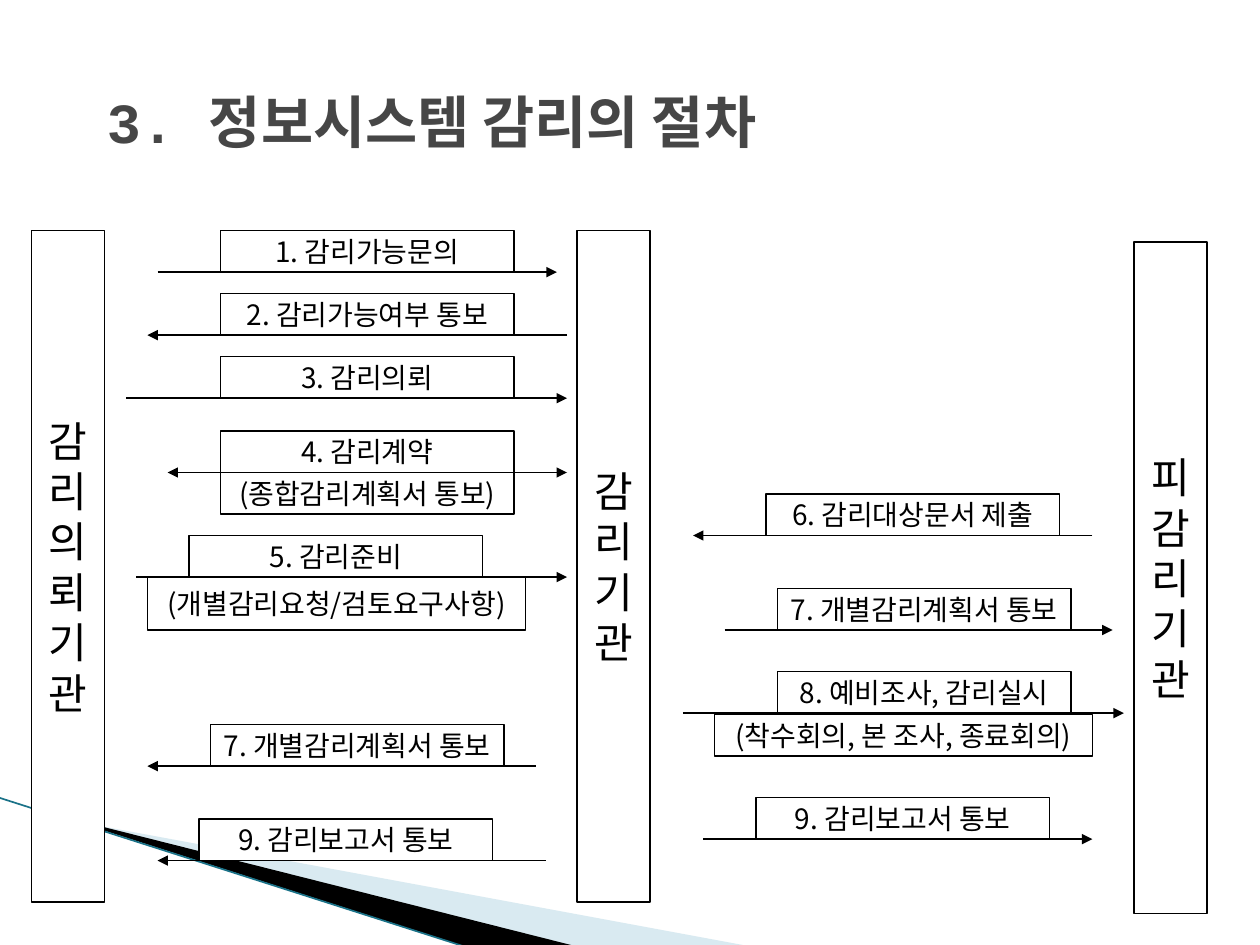
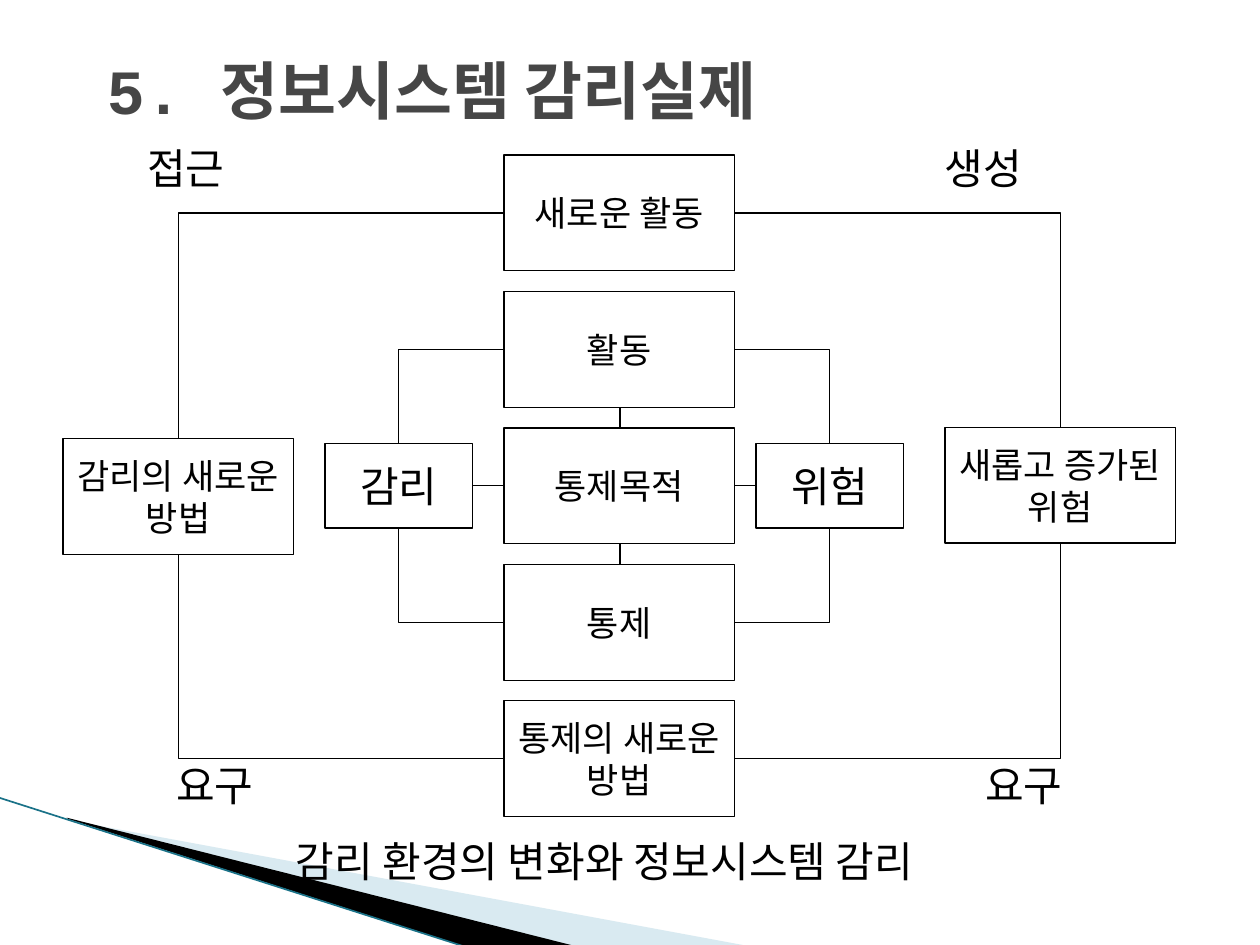
"""Build two slides on the steps and practice of information system audits."""
import lxml.etree
import pptx
import pptx.dml.color
import pptx.enum.shapes
import pptx.enum.text
import pptx.oxml.ns
import pptx.util

Inches = pptx.util.Inches
qn = pptx.oxml.ns.qn
HUES = {"ink": "000000", "paper": "FFFFFF", "title": "464646", "pale": "A0CBDC", "edge": "1A7288"}
RGB = {name: pptx.dml.color.RGBColor.from_string(hue) for name, hue in HUES.items()}
SANS = "Noto Sans CJK KR"
KINDS = pptx.enum.shapes.MSO_CONNECTOR
MID = pptx.enum.text.MSO_ANCHOR.MIDDLE
TOP = pptx.enum.text.MSO_ANCHOR.TOP
ALIGN = pptx.enum.text.PP_ALIGN


def put(slide, text, at, size, boxed=True, title=False):
    spot = [Inches(v) for v in at]
    if boxed:
        shape = slide.shapes.add_shape(pptx.enum.shapes.MSO_SHAPE.RECTANGLE, *spot)
        shape.shadow.inherit = False
        shape.fill.solid()
        shape.fill.fore_color.rgb = RGB["paper"]
        shape.line.color.rgb = RGB["ink"]
        shape.line.width = pptx.util.Pt(0.75)
    else:
        shape = slide.shapes.add_textbox(*spot)
    frame = shape.text_frame
    frame.text = text
    frame.word_wrap = title
    frame.vertical_anchor = MID if boxed or title else TOP
    look = {"name": "Courier New" if title else SANS, "size": pptx.util.Pt(size), "bold": title}
    for para in frame.paragraphs:
        para.alignment = ALIGN.CENTER if boxed else ALIGN.LEFT
        if not title:
            para.line_spacing = pptx.util.Pt(size * 1.2)
        for run in para.runs:
            for key, value in look.items():
                setattr(run.font, key, value)
            run.font.color.rgb = RGB["title" if title else "ink"]
            lxml.etree.SubElement(run.font._element, qn("a:ea"), typeface=SANS)


def link(slide, start, end, ends=(), bent=False, hue="ink", width=0.75):
    kind = KINDS.ELBOW if bent else KINDS.STRAIGHT
    line = slide.shapes.add_connector(kind, *[Inches(v) for v in (*start, *end)])
    line.line.color.rgb = RGB[hue]
    line.line.width = pptx.util.Pt(width)
    props = line._element.spPr
    if bent:
        props.find(qn("a:prstGeom")).set("prst", "bentConnector2")
    for end_tag in ends:
        lxml.etree.SubElement(props.find(qn("a:ln")), qn(end_tag), type="triangle")
    lxml.etree.SubElement(props, qn("a:effectLst"))


deck = pptx.Presentation()
deck.slide_width, deck.slide_height = Inches(10), Inches(7.5)

WEDGES = [
    ("pale", 40, [(0.55, 6.51), (5.95, 7.51), (4.56, 7.51), (0.55, 6.5)]),
    ("ink", 100, [(0.53, 6.49), (4.57, 7.51), (3.72, 7.52), (0.54, 6.5)]),
]
TITLES = [
    ("3. 정보시스템 감리의 절차", 0.67, 0.58, 32.4),
    ("5. 정보시스템 감리실제", 0.33, 0.75, 36),
]
pages = []
for text, top, high, size in TITLES:
    page = deck.slides.add_slide(deck.slide_layouts[6])
    for hue, alpha, points in WEDGES:
        spots = [(Inches(x), Inches(y)) for x, y in points]
        pen = page.shapes.build_freeform(*spots[0])
        pen.add_line_segments(spots[1:], close=True)
        wedge = pen.convert_to_shape()
        wedge.shadow.inherit = False
        wedge.fill.solid()
        wedge.fill.fore_color.rgb = RGB[hue]
        wedge.line.fill.background()
        if alpha < 100:
            tint = wedge._element.spPr.find(qn("a:solidFill"))[0]
            lxml.etree.SubElement(tint, qn("a:alpha"), val=str(alpha * 1000))
    link(page, (-0.01, 6.33), (3.71, 7.52), hue="edge", width=0.95)
    put(page, text, (0.75, top, 8.5, high), size, boxed=False, title=True)
    pages.append(page)
steps, cycle = pages

for name, left, top in [("감리의뢰기관", 0.25, 1.83), ("감리기관", 4.58, 1.83), ("피감리기관", 9, 1.92)]:
    put(steps, "\n".join(name), (left, top, 0.58, 5.33), 24)

NOTES = [
    ("(종합감리계획서 통보)", 1.75, 3.75, 2.33, 0.33),
    ("(개별감리요청/검토요구사항)", 1.17, 4.58, 3, 0.42),
    ("(착수회의, 본 조사, 종료회의)", 5.67, 5.67, 3, 0.33),
]
for text, *spot in NOTES:
    put(steps, text, spot, 16)

STEPS = [
    ("1. 감리가능문의", 1.75, 1.83, 1.25, 4.42),
    ("2. 감리가능여부 통보", 1.75, 2.33, 4.5, 1.17),
    ("3. 감리의뢰", 1.75, 2.83, 1, 4.5),
    ("4. 감리계약", 1.75, 3.42, 1.33, 4.5),
    ("5. 감리준비", 1.5, 4.25, 1.08, 4.5),
    ("6. 감리대상문서 제출", 6.08, 3.92, 8.67, 5.5),
    ("7. 개별감리계획서 통보", 1.67, 5.75, 4.25, 1.17),
    ("7. 개별감리계획서 통보", 6.17, 4.67, 5.75, 8.83),
    ("8. 예비조사, 감리실시", 6.17, 5.33, 5.42, 8.92),
    ("9. 감리보고서 통보", 1.58, 6.5, 4.33, 1.25),
    ("9. 감리보고서 통보", 6, 6.33, 5.58, 8.67),
]
for text, left, top, start, end in STEPS:
    put(steps, text, (left, top, 2.33, 0.33), 16)
    ends = ("a:headEnd", "a:tailEnd") if text.startswith("4") else ("a:tailEnd",)
    link(steps, (start, top + 0.33), (end, top + 0.33), ends)

WIDE, HIGH, PITCH = 1.83, 0.92, 1.083
LEFT, RIGHT, AXIS = 4, 5.83, 4.92
STACK = ["새로운 활동", "활동", "통제목적", "통제", "통제의 새로운\n방법"]
tops = [1.23 + PITCH * row for row in range(len(STACK))]
mids = [top + HIGH / 2 for top in tops]
for text, top in zip(STACK, tops):
    put(cycle, text, (LEFT, top, WIDE, HIGH), 20)

SIDES = [
    ("감리의 새로운\n방법", 0.5, 3.48, WIDE, HIGH, 20, LEFT, 0, 4),
    ("새롭고 증가된\n위험", 7.5, 3.39, WIDE, HIGH, 20, RIGHT, 0, 4),
    ("감리", 2.58, 3.52, 1.17, 0.67, 24, LEFT, 1, 3),
    ("위험", 6, 3.52, 1.17, 0.67, 24, RIGHT, 1, 3),
]
for text, left, top, wide, high, size, edge, first, last in SIDES:
    put(cycle, text, (left, top, wide, high), size)
    mid = left + wide / 2
    link(cycle, (edge, mids[first]), (mid, top), bent=True)
    link(cycle, (edge, mids[last]), (mid, top + high), bent=True)

for row in (1, 2):
    link(cycle, (AXIS, tops[row] + HIGH), (AXIS, tops[row + 1]))
for start, end in [(3.75, LEFT), (RIGHT, 6)]:
    link(cycle, (start, mids[2]), (end, mids[2]))

LABELS = [
    ("접근", 1.07, 1.08, 0.87),
    ("생성", 7.4, 1.08, 0.87),
    ("요구", 1.3, 5.98, 0.87),
    ("요구", 7.72, 5.98, 0.87),
    ("감리 환경의 변화와 정보시스템 감리", 2.25, 6.58, 5.65),
]
for text, left, top, wide in LABELS:
    put(cycle, text, (left, top, wide, 0.5), 24, boxed=False)

deck.save("out.pptx")
